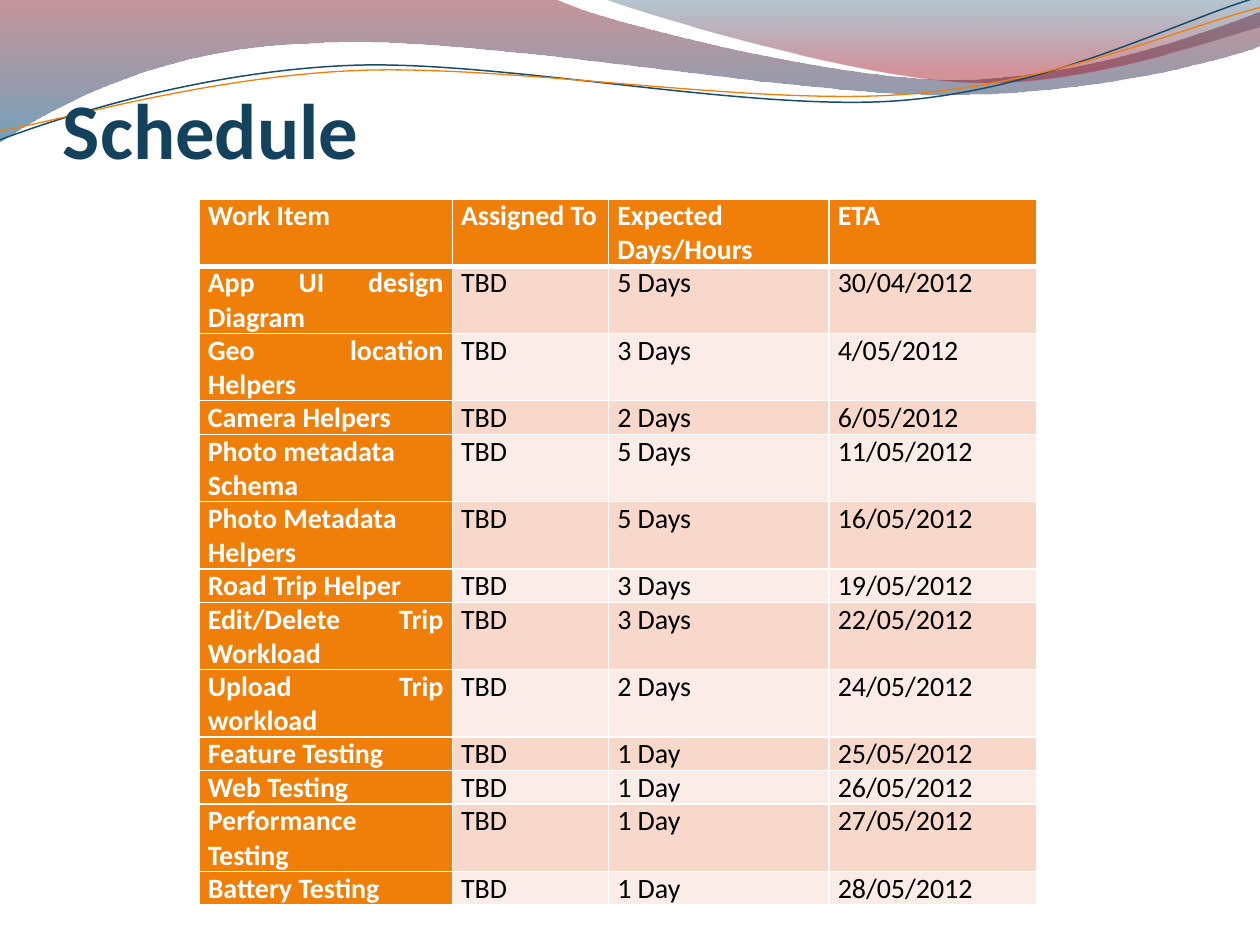
from dataclasses import dataclass

from lxml import etree
from pptx import Presentation
from pptx import util as u
from pptx.dml.color import RGBColor
from pptx.enum import text
from pptx.oxml import ns


@dataclass(frozen=True)
class Theme:
    """Colours, font and type sizes of the deck."""
    font: str = "Calibri"
    title: str = "14425D"
    accent: str = "F07F09"
    navy: str = "184E6D"
    white: str = "FFFFFF"
    black: str = "000000"
    bands: tuple = ("F9D8CC", "FCECE7")
    title_size: int = 45
    table_size: int = 16


T = Theme()

WAVES = [
    ([[(0, 0)], [(4.4, -0.01)], [(4.76, 0.17), (6.64, 0.63), (7.58, 0.63)],
      [(8.53, 0.63), (9.58, 0.26), (10, 0.09)], [(10.01, 0.36)],
      [(9.83, 0.44), (8.7, 0.76), (7.46, 0.75)],
      [(6.22, 0.75), (3.82, 0.28), (2.57, 0.34)],
      [(1.29, 0.36), (0.46, 0.83), (-0.01, 1.13)], [(0, 0)]],
     [(0, "7E1621", 45), (1, "005689", 55)]),
    ([[(4.79, -0.01)], [(5.09, 0.11), (6.82, 0.62), (7.69, 0.65)],
      [(8.56, 0.69), (9.61, 0.32), (10, 0.21)], [(10, 0)], [(4.79, -0.01)]],
     [(0, "094467", 30), (0.8, "A10F1F", 45)]),
]
STRANDS = [
    ([[(0, 1.11)], [(0.48, 0.93), (1.58, 0.57), (2.77, 0.52)],
      [(3.95, 0.47), (5.93, 0.89), (7.13, 0.8)],
      [(8.33, 0.71), (9.38, 0.15), (9.98, -0.02)]], T.navy, 0.85),
    ([[(0, 1.04)], [(0.47, 0.96), (1.64, 0.61), (2.83, 0.56)],
      [(4.03, 0.51), (5.97, 0.84), (7.17, 0.75)],
      [(8.36, 0.67), (9.41, 0.21), (10, 0.06)]], T.accent, 0.75),
]

HEADER = ("Work Item", "Assigned To", "Expected Days/Hours", "ETA")
TASKS = [
    ("App UI design Diagram", "5 Days", "30/04/2012"),
    ("Geo location Helpers", "3 Days", "4/05/2012"),
    ("Camera Helpers", "2 Days", "6/05/2012"),
    ("Photo metadata Schema", "5 Days", "11/05/2012"),
    ("Photo Metadata Helpers", "5 Days", "16/05/2012"),
    ("Road Trip Helper", "3 Days", "19/05/2012"),
    ("Edit/Delete Trip Workload", "3 Days", "22/05/2012"),
    ("Upload Trip workload", "2 Days", "24/05/2012"),
    ("Feature Testing", "1 Day", "25/05/2012"),
    ("Web Testing", "1 Day", "26/05/2012"),
    ("Performance Testing", "1 Day", "27/05/2012"),
    ("Battery Testing", "1 Day", "28/05/2012"),
]
LEFT_ALIGNED = ("Photo", "Road")
COL_WIDTHS = (2.01, 1.24, 1.75, 1.65)


def rgb(value):
    """Return the colour object of a hex value."""
    return RGBColor.from_string(value)


def add_outline(s, box, segments, close):
    """Draw a freeform of straight and cubic segments from the corner of the box."""
    left, top = box[:2]
    points = [(u.Inches(left + x), u.Inches(top + y)) for seg in segments for x, y in seg]
    builder = s.shapes.build_freeform(*points[0], scale=1.0)
    builder.add_line_segments(points[1:], close=close)
    sp = builder.convert_to_shape()
    sp.shadow.inherit = False
    lines = iter(list(sp._element.iter(ns.qn("a:lnTo"))))
    for seg in segments[1:]:
        steps = [next(lines) for _ in seg]
        if len(steps) == 3:
            curve = etree.Element(ns.qn("a:cubicBezTo"))
            steps[0].addprevious(curve)
            for step in steps:
                curve.append(step[0])
                step.getparent().remove(step)
    return sp


def add_banner(s, box):
    """Draw the gradient waves and the thin strands over them."""
    for outline, stops in WAVES:
        sp = add_outline(s, box, outline, True)
        sp.line.fill.background()
        sp.fill.gradient()
        sp.fill.gradient_angle = 270
        for stop, (position, colour, _) in zip(sp.fill.gradient_stops, stops):
            stop.position = position
            stop.color.rgb = rgb(colour)
        colours = sp._element.spPr.iter(ns.qn("a:srgbClr"))
        for clr, (_, _, opacity) in zip(colours, stops):
            etree.SubElement(clr, ns.qn("a:alpha"), val=str(opacity * 1000))
    for outline, colour, width in STRANDS:
        sp = add_outline(s, box, outline, False)
        sp.fill.background()
        sp.line.color.rgb = rgb(colour)
        sp.line.width = u.Pt(width)


def write(tf, words, size, colour, bold, align=text.PP_ALIGN.LEFT):
    """Write one formatted paragraph into a text frame."""
    p = tf.paragraphs[0]
    p.alignment = align
    r = p.add_run()
    r.text = words
    for name, value in dict(name=T.font, size=u.Pt(size), bold=bold).items():
        setattr(r.font, name, value)
    r.font.color.rgb = rgb(colour)


def add_title(s, box, words):
    """Place the slide title at the foot of the box."""
    tf = s.shapes.add_textbox(*map(u.Inches, box)).text_frame
    layout = dict(word_wrap=True, vertical_anchor=text.MSO_ANCHOR.BOTTOM, margin_left=0,
                  margin_top=u.Inches(0.05), margin_right=0, margin_bottom=0)
    for name, value in layout.items():
        setattr(tf, name, value)
    write(tf, words, T.title_size, T.title, True)


def add_borders(cell, widths):
    """Give a cell white borders of the given widths in points."""
    tc_pr = cell._tc.get_or_add_tcPr()
    for side, width in widths.items():
        ln = etree.SubElement(tc_pr, ns.qn(f"a:ln{side}"), w=str(u.Pt(width)))
        fill = etree.SubElement(ln, ns.qn("a:solidFill"))
        etree.SubElement(fill, ns.qn("a:srgbClr"), val=T.white)


def add_schedule(s, box):
    """Fill the box with the table of work items."""
    rows = [HEADER] + [(item, "TBD", days, eta) for item, days, eta in TASKS]
    frame = s.shapes.add_table(len(rows), len(HEADER), *map(u.Inches, box))
    table = frame.table
    table.horz_banding = False
    for column, width in zip(table.columns, COL_WIDTHS):
        column.width = u.Inches(width)
    margins = dict(margin_left=u.Inches(0.07), margin_right=u.Inches(0.07),
                   margin_top=0, margin_bottom=0)
    for i, row in enumerate(rows):
        table.rows[i].height = u.Inches(0)
        for j, words in enumerate(row):
            cell = table.cell(i, j)
            for name, value in margins.items():
                setattr(cell, name, value)
            add_borders(cell, dict(L=1, R=1, T=3 if i == 1 else 1, B=3 if i == 0 else 1))
            heading = i == 0 or j == 0
            cell.fill.solid()
            cell.fill.fore_color.rgb = rgb(T.accent if heading else T.bands[(i - 1) % 2])
            left = words.startswith(LEFT_ALIGNED)
            write(cell.text_frame, words, T.table_size, T.white if heading else T.black,
                  heading, text.PP_ALIGN.LEFT if left else text.PP_ALIGN.JUSTIFY)
    frame.height = u.Inches(box[3])


def main():
    """Build and save the schedule slide."""
    prs = Presentation()
    prs.slide_width, prs.slide_height = u.Inches(10), u.Inches(7.5)
    s = prs.slides.add_slide(prs.slide_layouts[6])
    add_banner(s, (0, 0, 10, 1.13))
    add_title(s, (0.5, 0.58, 9, 0.81), "Schedule")
    add_schedule(s, (1.58, 1.58, 6.65, 5.6))
    prs.save("out.pptx")


if __name__ == "__main__":
    main()
